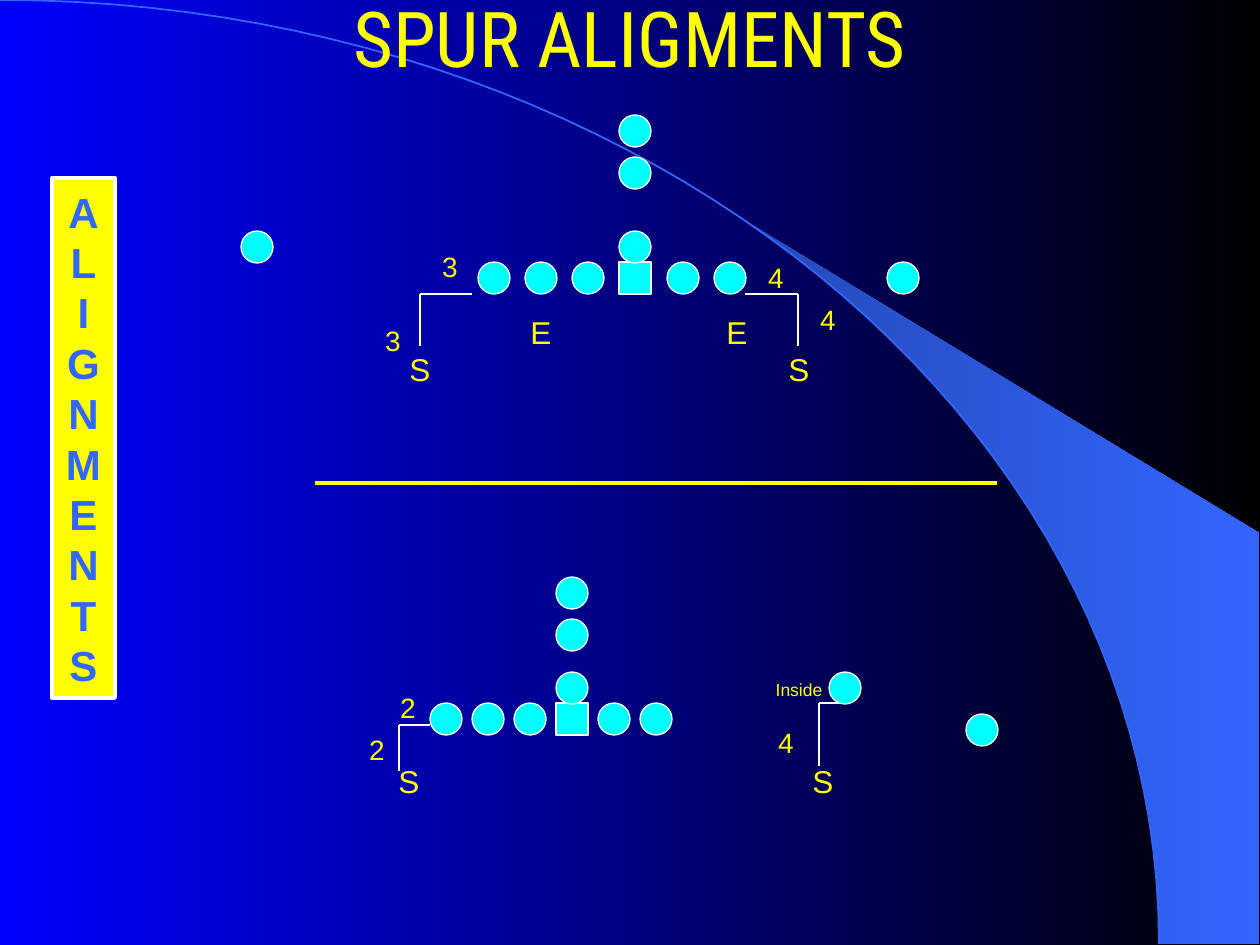
from dataclasses import dataclass

from lxml import etree
from pptx import Presentation
from pptx.dml.color import RGBColor
from pptx.enum.shapes import MSO_CONNECTOR, MSO_SHAPE
from pptx.enum.text import MSO_ANCHOR, PP_ALIGN
from pptx.oxml.ns import qn
from pptx.util import Emu, Pt

OVAL = MSO_SHAPE.OVAL
RECTANGLE = MSO_SHAPE.RECTANGLE
STRAIGHT = MSO_CONNECTOR.STRAIGHT
MIDDLE = MSO_ANCHOR.MIDDLE
CENTER = PP_ALIGN.CENTER

PX_PER_INCH = 126
EMU_PER_PX = 914400 / PX_PER_INCH
SLIDE_WIDTH, SLIDE_HEIGHT = 1260, 945
PLAYER_SIZE = 32
ARC_STEPS = 50
WEDGE_START = 22  # arc step where the wedge touches the curve


@dataclass(frozen=True)
class Theme:
    blue: RGBColor = RGBColor(0x00, 0x00, 0xFF)
    black: RGBColor = RGBColor(0x00, 0x00, 0x00)
    accent: RGBColor = RGBColor(0x33, 0x66, 0xFF)
    accent_dark: RGBColor = RGBColor(0x24, 0x49, 0xB6)
    yellow: RGBColor = RGBColor(0xFF, 0xFF, 0x00)
    cyan: RGBColor = RGBColor(0x00, 0xFF, 0xFF)
    white: RGBColor = RGBColor(0xFF, 0xFF, 0xFF)
    title_font: str = "Roboto Condensed"
    body_font: str = "Arial"
    title_size: int = 44
    sidebar_size: int = 24
    sidebar_spacing: float = 28.8
    defender_size: int = 18
    distance_size: int = 16
    note_size: int = 10
    thin: float = 0.75
    curve: float = 1
    thick: float = 2.25


THEME = Theme()


def px(length):
    return Emu(round(length * EMU_PER_PX))


def set_gradient(fill, start, end):
    fill.gradient()
    fill.gradient_angle = 0
    for stop, color, position in zip(fill.gradient_stops, (start, end), (0, 1)):
        stop.color.rgb = color
        stop.position = position


def style_text(text_frame, size, color, font=THEME.body_font, bold=False):
    for paragraph in text_frame.paragraphs:
        paragraph.alignment = CENTER
        for run in paragraph.runs:
            run.font.size = Pt(size)
            run.font.name = font
            run.font.bold = bold
            run.font.color.rgb = color


def add_text(slide, box, text, size, font=THEME.body_font):
    text_frame = slide.shapes.add_textbox(*map(px, box)).text_frame
    text_frame.word_wrap = True
    text_frame.vertical_anchor = MIDDLE
    text_frame.text = text
    style_text(text_frame, size, THEME.yellow, font)


def add_label(slide, center_x, center_y, text, size):
    width, height = 74, 46
    box = (center_x - width // 2, center_y - height // 2, width, height)
    add_text(slide, box, text, size)


def add_block(slide, kind, box, fill, line_width):
    shape = slide.shapes.add_shape(kind, *map(px, box))
    shape.shadow.inherit = False
    shape.fill.solid()
    shape.fill.fore_color.rgb = fill
    shape.line.color.rgb = THEME.white
    shape.line.width = Pt(line_width)
    return shape


def add_player(slide, center_x, center_y, kind=OVAL):
    half = PLAYER_SIZE // 2
    box = (center_x - half, center_y - half, PLAYER_SIZE, PLAYER_SIZE)
    add_block(slide, kind, box, THEME.cyan, THEME.thin)


def add_formation(slide, line_xs, line_y, back_ys):
    """Draw six linemen with a square center and the backs behind him."""
    center_index = 3
    for index, x in enumerate(line_xs):
        add_player(slide, x, line_y, RECTANGLE if index == center_index else OVAL)
    for y in back_ys:
        add_player(slide, line_xs[center_index], y)


def add_line(slide, start, end, color, width):
    line = slide.shapes.add_connector(STRAIGHT, *map(px, start + end))
    line.line.color.rgb = color
    line.line.width = Pt(width)
    etree.SubElement(line._element.spPr, qn("a:effectLst"))


def add_bracket(slide, inner_x, corner_x, top, bottom):
    """Draw the across-and-back lines that locate a defender."""
    corner = (corner_x, top)
    add_line(slide, (inner_x, top), corner, THEME.white, THEME.thin)
    add_line(slide, corner, (corner_x, bottom), THEME.white, THEME.thin)


def arc_points():
    """Sample the cubic curve from the top left to the bottom right."""
    controls = ((0, 0), (640, 0), (1159, 422), (1159, 944))
    points = []
    for step in range(ARC_STEPS + 1):
        t = step / ARC_STEPS
        weights = ((1 - t) ** 3, 3 * t * (1 - t) ** 2, 3 * t * t * (1 - t), t ** 3)
        points.append(tuple(
            sum(weight * control[axis] for weight, control in zip(weights, controls))
            for axis in (0, 1)))
    return points


def add_freeform(slide, points, close):
    vertices = [(px(x), px(y)) for x, y in points]
    builder = slide.shapes.build_freeform(*vertices[0])
    builder.add_line_segments(vertices[1:], close=close)
    shape = builder.convert_to_shape()
    shape.shadow.inherit = False
    return shape


def add_backdrop(slide):
    set_gradient(slide.background.fill, THEME.blue, THEME.black)
    points = arc_points()
    wedge = add_freeform(
        slide, points[WEDGE_START:] + [(1259, 944), (1259, 533)], close=True)
    set_gradient(wedge.fill, THEME.accent_dark, THEME.accent)
    wedge.line.fill.background()
    arc = add_freeform(slide, points, close=False)
    arc.fill.background()
    arc.line.color.rgb = THEME.accent
    arc.line.width = Pt(THEME.curve)


def add_sidebar(slide, word):
    sidebar = add_block(
        slide, RECTANGLE, (52, 178, 63, 520), THEME.yellow, THEME.thick)
    text_frame = sidebar.text_frame
    text_frame.text = "\n".join(word)
    text_frame.vertical_anchor = MIDDLE
    style_text(text_frame, THEME.sidebar_size, THEME.accent, bold=True)
    for paragraph in text_frame.paragraphs:
        paragraph.line_spacing = Pt(THEME.sidebar_spacing)


def main():
    presentation = Presentation()
    presentation.slide_width = px(SLIDE_WIDTH)
    presentation.slide_height = px(SLIDE_HEIGHT)
    slide = presentation.slides.add_slide(presentation.slide_layouts[6])

    add_backdrop(slide)
    add_text(slide, (94, 0, 1072, 73), "SPUR ALIGMENTS",
             THEME.title_size, THEME.title_font)
    add_sidebar(slide, "ALIGNMENTS")
    add_line(slide, (315, 483), (997, 483), THEME.yellow, THEME.thick)

    add_formation(slide, [494 + 189 * i // 4 for i in range(6)], 278, (131, 173, 247))
    add_formation(slide, [446 + 42 * i for i in range(6)], 719, (593, 635, 688))
    for x, y in ((257, 247), (903, 278), (845, 688), (982, 730)):
        add_player(slide, x, y)

    for bracket in ((472, 420, 294, 346), (745, 798, 294, 346),
                    (430, 399, 725, 771), (840, 819, 703, 766)):
        add_bracket(slide, *bracket)

    labels = {
        THEME.defender_size: (("E", 541, 332), ("E", 737, 332), ("S", 420, 369),
                              ("S", 799, 369), ("S", 409, 781), ("S", 823, 781)),
        THEME.distance_size: (("3", 450, 266), ("3", 393, 340), ("4", 776, 277),
                              ("4", 828, 319), ("2", 408, 707), ("2", 377, 749),
                              ("4", 786, 742)),
        THEME.note_size: (("Inside", 799, 689),),
    }
    for size, entries in labels.items():
        for text, x, y in entries:
            add_label(slide, x, y, text, size)

    presentation.save("out.pptx")


if __name__ == "__main__":
    main()
